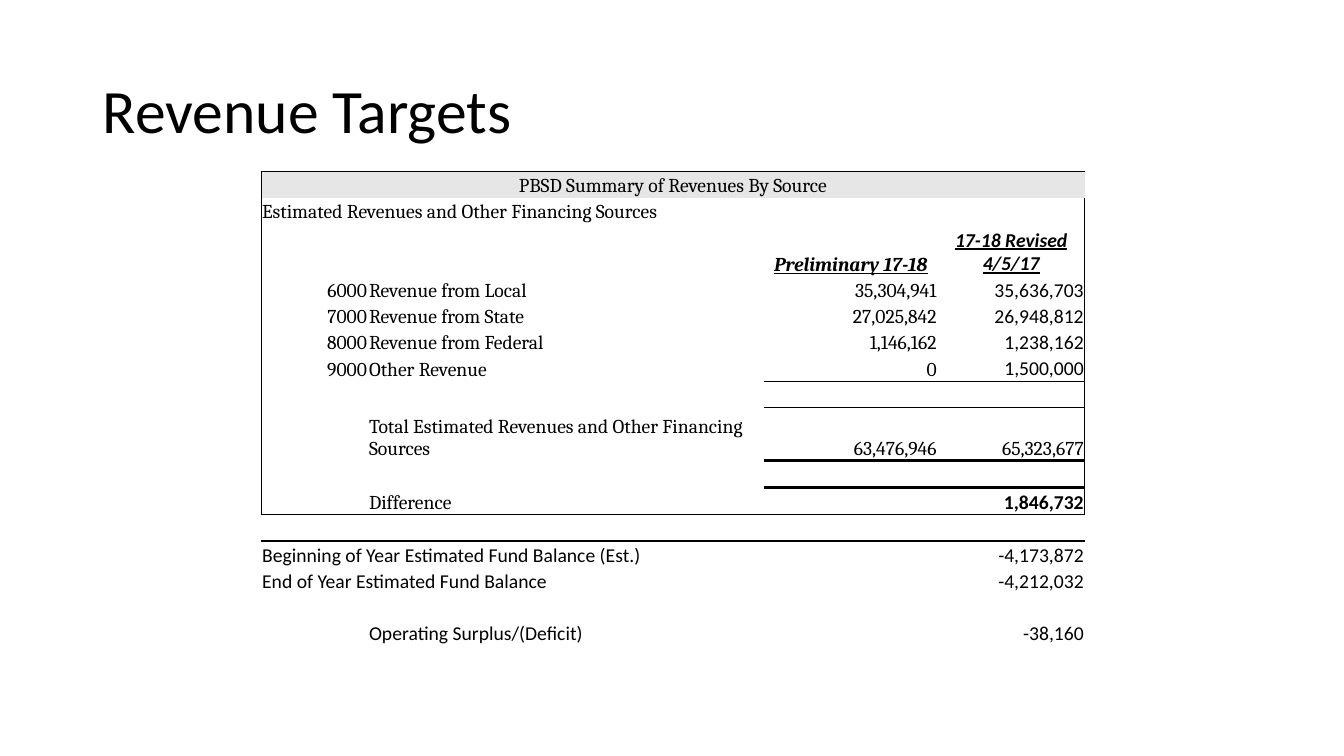
from lxml.etree import SubElement
from pptx import Presentation
from pptx.dml.color import RGBColor
from pptx.enum.text import MSO_ANCHOR, PP_ALIGN
from pptx.oxml.ns import qn
from pptx.util import Inches, Pt

WIDTHS = [1.06, 3.93, 1.72, 1.46]
HEIGHTS = {2: 0.52, 8: 0.53, 9: 0.27, 10: 0.27}
ROWS = [
    ["PBSD Summary of Revenues By Source", "", "", ""],
    ["Estimated Revenues and Other Financing Sources", "", "", ""],
    ["", "", "Preliminary 17-18", "17-18 Revised 4/5/17"],
    ["6000", "Revenue from Local", "35,304,941", "35,636,703"],
    ["7000", "Revenue from State", "27,025,842", "26,948,812"],
    ["8000", "Revenue from Federal", "1,146,162", "1,238,162"],
    ["9000", "Other Revenue", "0", "1,500,000"],
    ["", "", "", ""],
    ["", "Total Estimated Revenues and Other Financing Sources",
     "63,476,946", "65,323,677"],
    ["", "", "", ""],
    ["", "Difference", "", "1,846,732"],
    ["", "", "", ""],
    ["Beginning of Year Estimated Fund Balance (Est.)", "", "", "-4,173,872"],
    ["End of Year Estimated Fund Balance", "", "", "-4,212,032"],
    ["", "", "", ""],
    ["", "Operating Surplus/(Deficit)", "", "-38,160"],
]
SPANS = {0: 3, 1: 1, 12: 1, 13: 1}
TITLE, HEAD, TOTAL, LAST = 0, 2, 8, 10
RULES = {-1: (1, 0), 6: (0.5, 2), TOTAL: (2, 2), LAST: (1, 0)}
PLAIN = "{2D5ABB26-0587-4C30-8999-92F81FD0307C}"


def paint(code):
    return RGBColor.from_string(code)


def apply(target, values):
    for name, value in values.items():
        setattr(target, name, value)


class Deck:
    ink = "000000"
    shade = "E7E6E6"
    sans = "Calibri"
    serif = "Cambria"

    def __init__(self, wide, high):
        self.file = Presentation()
        apply(self.file, {"slide_width": Inches(wide), "slide_height": Inches(high)})
        self.slide = self.file.slides.add_slide(self.file.slide_layouts[6])

    def label(self, para, text, size, **style):
        run = para.add_run()
        run.text = text
        apply(run.font, {"size": Pt(size), **style})
        run.font.color.rgb = paint(self.ink)

    def title(self, text, *box):
        frame = self.slide.shapes.add_textbox(*map(Inches, box)).text_frame
        apply(frame, {"word_wrap": True, "vertical_anchor": MSO_ANCHOR.MIDDLE})
        para = frame.paragraphs[0]
        para.line_spacing = 0.9
        self.label(para, text, 44, name=self.sans)

    def edge(self, cell, side, width):
        props = cell._tc.get_or_add_tcPr()
        line = SubElement(props, qn("a:ln" + side), w=str(Pt(width)))
        fill = SubElement(line, qn("a:solidFill"))
        SubElement(fill, qn("a:srgbClr"), val=self.ink)

    def frame(self, cell, row, col):
        if row <= LAST and col == 0:
            self.edge(cell, "L", 1)
        if row <= LAST and col == len(WIDTHS) - 1:
            self.edge(cell, "R", 1)
        for side, place in (("T", row - 1), ("B", row)):
            width, first = RULES.get(place, (0, 0))
            if width and col >= first:
                self.edge(cell, side, width)

    def fill(self, cell, row, col, text):
        apply(cell, {"margin_left": Inches(0.01), "margin_right": Inches(0.01),
                     "margin_top": Inches(0.01), "margin_bottom": 0,
                     "vertical_anchor": MSO_ANCHOR.BOTTOM})
        self.frame(cell, row, col)
        if row == TITLE:
            cell.fill.solid()
            cell.fill.fore_color.rgb = paint(self.shade)
        else:
            cell.fill.background()
        para = cell.text_frame.paragraphs[0]
        if not text:
            SubElement(para._p, qn("a:endParaRPr"), sz="1400")
            return
        if row in (TITLE, HEAD):
            para.alignment = PP_ALIGN.CENTER
        elif col >= 2 or text.isdigit():
            para.alignment = PP_ALIGN.RIGHT
        else:
            para.alignment = PP_ALIGN.LEFT
        sans = row > LAST or (col == 3 and row != TOTAL)
        head = row == HEAD
        self.label(para, text, 14, name=self.sans if sans else self.serif,
                   bold=head or (row == LAST and col == 3),
                   italic=head, underline=head)

    def table(self, left, top):
        highs = [HEIGHTS.get(row, 0.26) for row in range(len(ROWS))]
        box = map(Inches, (left, top, sum(WIDTHS), sum(highs)))
        grid = self.slide.shapes.add_table(len(ROWS), len(WIDTHS), *box).table
        apply(grid, {"first_row": False, "horz_banding": False})
        grid._tbl.tblPr[0].text = PLAIN
        for col, width in zip(grid.columns, WIDTHS):
            col.width = Inches(width)
        for row, high in zip(grid.rows, highs):
            row.height = Inches(high)
        for row, texts in enumerate(ROWS):
            for col, text in enumerate(texts):
                self.fill(grid.cell(row, col), row, col, text)
        for row, end in SPANS.items():
            grid.cell(row, 0).merge(grid.cell(row, end))


def main():
    deck = Deck(13.33, 7.5)
    deck.title("Revenue Targets", 0.92, 0.4, 11.5, 1.45)
    deck.table(2.59, 1.7)
    deck.file.save("out.pptx")


if __name__ == "__main__":
    main()
